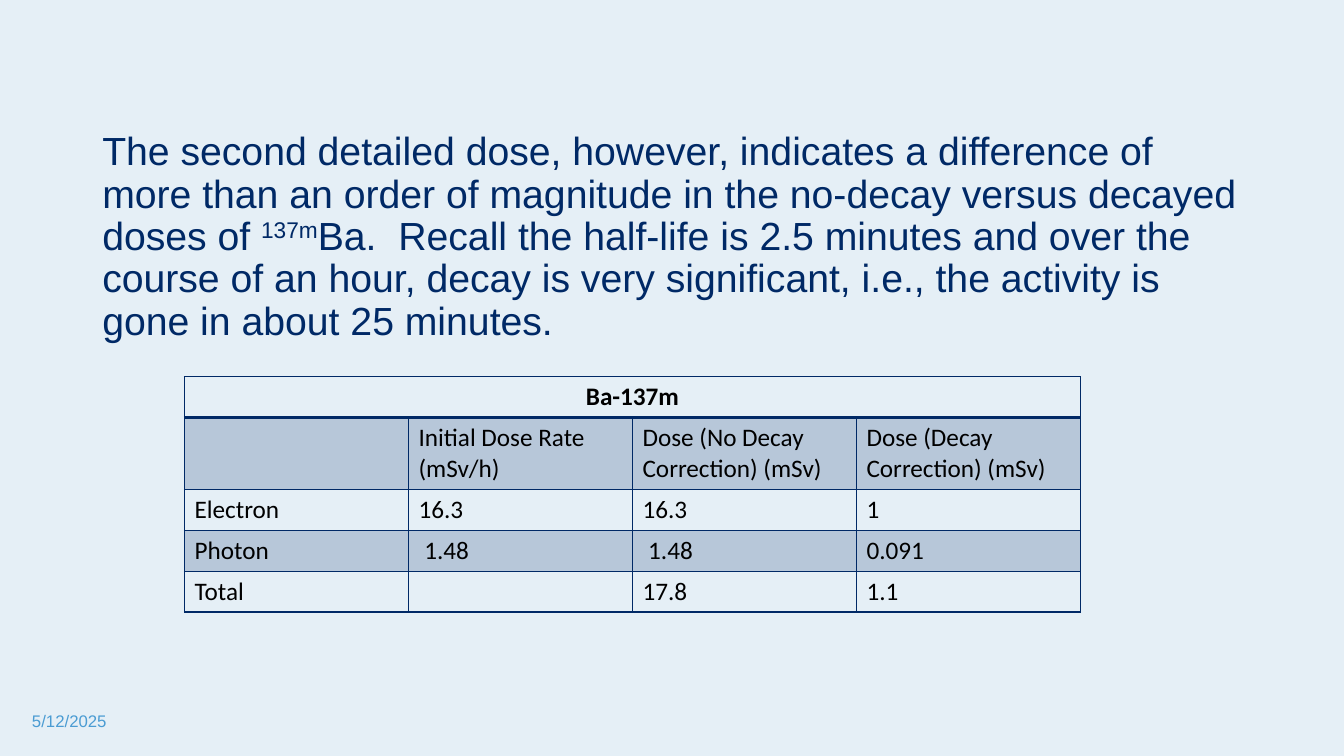
from lxml.etree import SubElement
from pptx import Presentation
from pptx.dml.color import RGBColor
from pptx.enum.text import MSO_ANCHOR, PP_ALIGN
from pptx.oxml.ns import qn
from pptx.util import Pt

COLORS = {"background": "E5EFF6", "navy": "002966", "sky": "4B9CD3", "black": "000000"}
FORMATS = {
    "body": {"name": "Arial", "size": Pt(28), "color": "navy"},
    "date": {"name": "Arial", "size": Pt(12), "color": "sky"},
    "title": {"name": "Calibri", "size": Pt(18), "bold": True, "color": "black"},
    "cell": {"name": "Calibri", "size": Pt(18), "bold": False, "color": "black"},
}
BODY = [
    ("The second detailed dose, however, indicates a difference of more than an order "
     "of magnitude in the no-decay versus decayed doses of ", False),
    ("137m", True),
    ("Ba.  Recall the half-life is 2.5 minutes and over the course of an hour, decay is "
     "very significant, i.e., the activity is gone in about 25 minutes.", False),
]
DATE = "5/12/2025"
DOSES = [
    ("Ba-137m", "", "", ""),
    ("", "Initial Dose Rate (mSv/h)", "Dose (No Decay Correction) (mSv)",
     "Dose (Decay Correction) (mSv)"),
    ("Electron", "16.3", "16.3", "1"),
    ("Photon", " 1.48", " 1.48", "0.091"),
    ("Total", "", "17.8", "1.1"),
]
TABLE_LEFT, TABLE_TOP, COLUMN_WIDTH = 131.8, 269, 160
ROW_HEIGHT, HEADING_HEIGHT = 29.2, 51.4
BAND_ALPHA = 20


def color(name):
    return RGBColor.from_string(COLORS[name])


def apply_format(font, format_name):
    for attribute, value in FORMATS[format_name].items():
        if attribute == "color":
            font.color.rgb = color(value)
        else:
            setattr(font, attribute, value)


def add_text(slide, left, top, width, height, runs, format_name):
    """Add a wrapped box from (text, is_superscript) runs; return its frame."""
    frame = slide.shapes.add_textbox(Pt(left), Pt(top), Pt(width), Pt(height)).text_frame
    frame.word_wrap = True
    for text, superscript in runs:
        run = frame.paragraphs[0].add_run()
        run.text = text
        apply_format(run.font, format_name)
        if superscript:
            run._r.get_or_add_rPr().set("baseline", "30000")
    return frame


def add_borders(cell, widths):
    properties = cell._tc.get_or_add_tcPr()
    for side, width in widths.items():
        line = SubElement(properties, qn(f"a:ln{side}"), w=str(Pt(width)))
        fill = SubElement(line, qn("a:solidFill"))
        SubElement(fill, qn("a:srgbClr"), val=COLORS["navy"])


def fill_cell(cell, banded):
    if not banded:
        cell.fill.background()
        return
    cell.fill.solid()
    cell.fill.fore_color.rgb = color("navy")
    tint = cell._tc.tcPr.find(qn("a:solidFill")).find(qn("a:srgbClr"))
    SubElement(tint, qn("a:alpha"), val=str(BAND_ALPHA * 1000))


def add_dose_table(slide):
    heights = [HEADING_HEIGHT if row == 1 else ROW_HEIGHT for row in range(len(DOSES))]
    column_count = len(DOSES[0])
    table = slide.shapes.add_table(
        len(DOSES), column_count, Pt(TABLE_LEFT), Pt(TABLE_TOP),
        Pt(COLUMN_WIDTH * column_count), Pt(sum(heights))).table
    table.first_row = True
    table.horz_banding = False
    for column in table.columns:
        column.width = Pt(COLUMN_WIDTH)
    for row_index, values in enumerate(DOSES):
        table.rows[row_index].height = Pt(heights[row_index])
        for column_index, value in enumerate(values):
            cell = table.cell(row_index, column_index)
            cell.text = value
            paragraph = cell.text_frame.paragraphs[0]
            for run in paragraph.runs:
                apply_format(run.font, "cell" if row_index else "title")
            if row_index == 0:
                paragraph.alignment = PP_ALIGN.CENTER
            add_borders(cell, {"L": 1, "R": 1, "T": 2 if row_index == 1 else 1,
                               "B": 2 if row_index == 0 else 1})
            fill_cell(cell, banded=row_index % 2 == 1)
    table.cell(0, 0).merge(table.cell(0, column_count - 1))


def main():
    presentation = Presentation()
    presentation.slide_width, presentation.slide_height = Pt(960), Pt(540)
    slide = presentation.slides.add_slide(presentation.slide_layouts[6])
    slide.background.fill.solid()
    slide.background.fill.fore_color.rgb = color("background")

    body = add_text(slide, 66, 90.7, 828, 171.4, BODY, "body")
    body.paragraphs[0].line_spacing = 0.9
    date = add_text(slide, 15.8, 500.4, 216, 28.8, [(DATE, False)], "date")
    date.vertical_anchor = MSO_ANCHOR.MIDDLE
    add_dose_table(slide)
    presentation.save("out.pptx")


if __name__ == "__main__":
    main()
